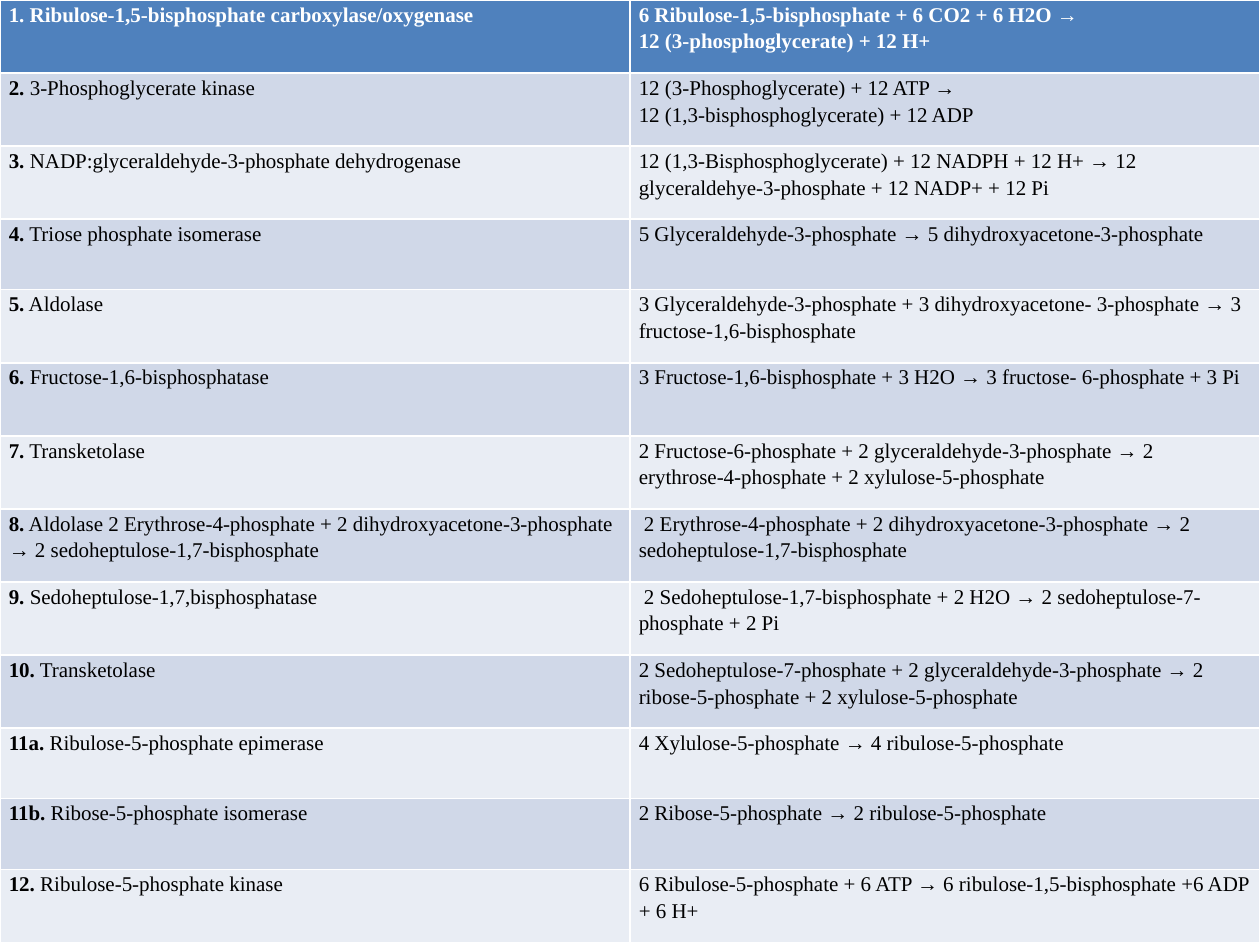
"""Build a slide with a table of the Calvin cycle enzymes and their reactions."""
import pptx
import pptx.dml.color
import pptx.util
from pptx.util import Inches

WHITE = pptx.dml.color.RGBColor(0xFF, 0xFF, 0xFF)
BLACK = pptx.dml.color.RGBColor(0x00, 0x00, 0x00)
HEADER_BLUE = pptx.dml.color.RGBColor(0x4F, 0x81, 0xBD)
BAND_DARK = pptx.dml.color.RGBColor(0xD0, 0xD8, 0xE8)
BAND_LIGHT = pptx.dml.color.RGBColor(0xE9, 0xED, 0xF4)

STEPS = [
    ("1.", "Ribulose-1,5-bisphosphate carboxylase/oxygenase",
     "6 Ribulose-1,5-bisphosphate + 6 CO2 + 6 H2O →\n12 (3-phosphoglycerate) + 12 H+"),
    ("2.", "3-Phosphoglycerate kinase",
     "12 (3-Phosphoglycerate) + 12 ATP →\n12 (1,3-bisphosphoglycerate) + 12 ADP"),
    ("3.", "NADP:glyceraldehyde-3-phosphate dehydrogenase",
     "12 (1,3-Bisphosphoglycerate) + 12 NADPH + 12 H+ → "
     "12 glyceraldehye-3-phosphate + 12 NADP+ + 12 Pi"),
    ("4.", "Triose phosphate isomerase",
     "5 Glyceraldehyde-3-phosphate → 5 dihydroxyacetone-3-phosphate"),
    ("5.", "Aldolase",
     "3 Glyceraldehyde-3-phosphate + 3 dihydroxyacetone- 3-phosphate → "
     "3 fructose-1,6-bisphosphate"),
    ("6.", "Fructose-1,6-bisphosphatase",
     "3 Fructose-1,6-bisphosphate + 3 H2O → 3 fructose- 6-phosphate + 3 Pi"),
    ("7.", "Transketolase",
     "2 Fructose-6-phosphate + 2 glyceraldehyde-3-phosphate → "
     "2 erythrose-4-phosphate + 2 xylulose-5-phosphate"),
    ("8.", "Aldolase 2 Erythrose-4-phosphate + 2 dihydroxyacetone-3-phosphate → "
     "2 sedoheptulose-1,7-bisphosphate",
     " 2 Erythrose-4-phosphate + 2 dihydroxyacetone-3-phosphate → "
     "2 sedoheptulose-1,7-bisphosphate"),
    ("9.", "Sedoheptulose-1,7,bisphosphatase",
     " 2 Sedoheptulose-1,7-bisphosphate + 2 H2O → 2 sedoheptulose-7-phosphate + 2 Pi"),
    ("10.", "Transketolase",
     "2 Sedoheptulose-7-phosphate + 2 glyceraldehyde-3-phosphate → "
     "2 ribose-5-phosphate + 2 xylulose-5-phosphate"),
    ("11a.", "Ribulose-5-phosphate epimerase",
     "4 Xylulose-5-phosphate → 4 ribulose-5-phosphate"),
    ("11b.", "Ribose-5-phosphate isomerase",
     "2 Ribose-5-phosphate → 2 ribulose-5-phosphate"),
    ("12.", "Ribulose-5-phosphate kinase",
     "6 Ribulose-5-phosphate + 6 ATP → 6 ribulose-1,5-bisphosphate +6 ADP + 6 H+"),
]
SHORT_STEPS = ("4.", "11a.", "11b.")

deck = pptx.Presentation()
deck.slide_width = Inches(10)
deck.slide_height = Inches(7.5)
slide = deck.slides.add_slide(deck.slide_layouts[6])
reactions = slide.shapes.add_table(
    len(STEPS), 2, Inches(0), Inches(0), Inches(10), Inches(7.5)).table

for index, (number, enzyme, equation) in enumerate(STEPS):
    is_header = index == 0
    band = HEADER_BLUE if is_header else BAND_DARK if index % 2 else BAND_LIGHT
    reactions.rows[index].height = Inches(0.56 if number in SHORT_STEPS else 0.58)
    enzyme_cell, equation_cell = reactions.rows[index].cells

    enzyme_line = enzyme_cell.text_frame.paragraphs[0]
    if is_header:
        enzyme_line.add_run().text = f"{number} {enzyme}"
    else:
        number_run = enzyme_line.add_run()
        number_run.text = number
        number_run.font.bold = True
        enzyme_line.add_run().text = f" {enzyme}"
    equation_cell.text_frame.text = equation

    for cell in (enzyme_cell, equation_cell):
        cell.fill.solid()
        cell.fill.fore_color.rgb = band
        cell.margin_left = cell.margin_right = Inches(0.07)
        cell.margin_top = cell.margin_bottom = Inches(0)
        for paragraph in cell.text_frame.paragraphs:
            paragraph.line_spacing = 1.15
            paragraph.font.name = "Times New Roman"
            paragraph.font.size = pptx.util.Pt(12)
            paragraph.font.bold = is_header
            paragraph.font.color.rgb = WHITE if is_header else BLACK

deck.save("out.pptx")
